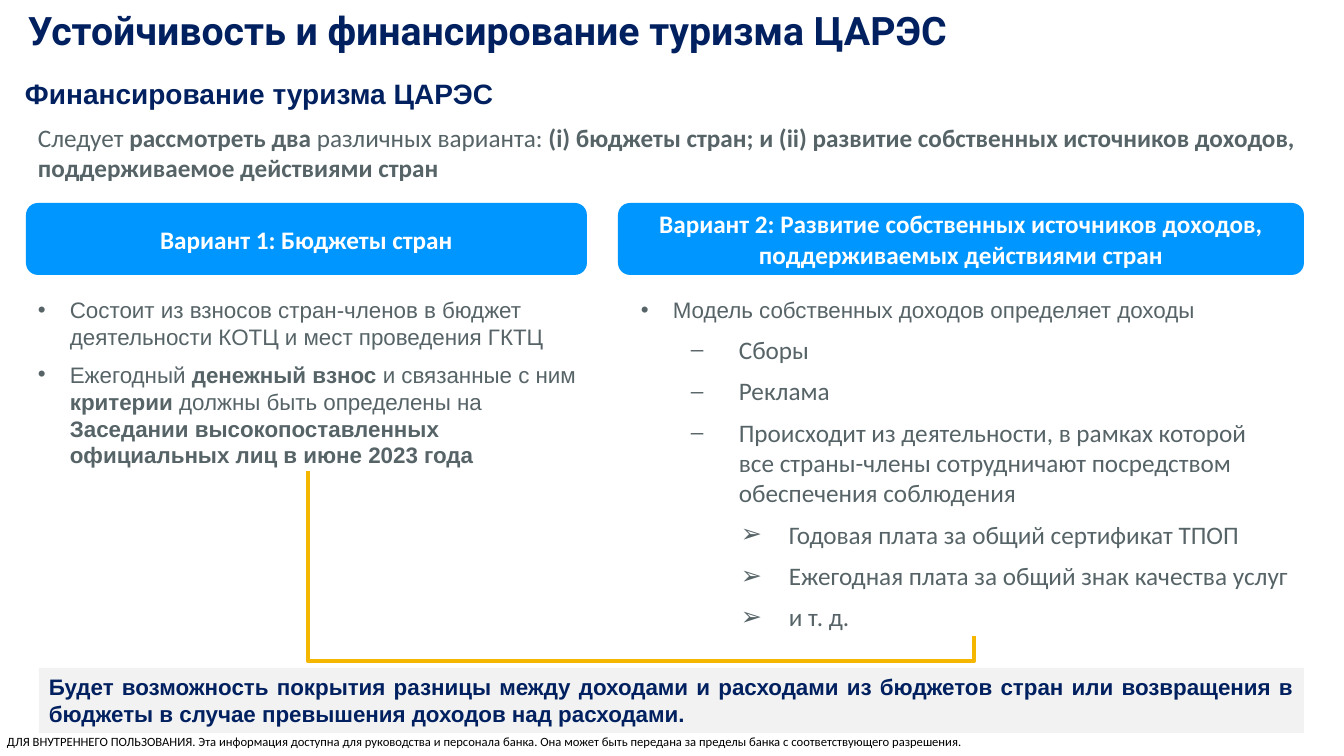
from lxml.etree import SubElement
from pptx import Presentation
from pptx.dml.color import RGBColor
from pptx.enum.shapes import MSO_CONNECTOR, MSO_SHAPE
from pptx.enum.text import MSO_ANCHOR, MSO_AUTO_SIZE, PP_ALIGN
from pptx.oxml.ns import qn
from pptx.util import Emu, Pt

PX = 914400 / 100.8

THEME = {
    "navy": "002060", "grey": "566367", "white": "FFFFFF", "black": "000000",
    "blue": "0096FF", "strip": "F2F2F2", "gold": "F5B600",
    "title": {"name": "Roboto", "size": Pt(28), "bold": True},
    "subtitle": {"name": "Arial", "size": Pt(20), "bold": True},
    "lead": {"name": "Calibri", "size": Pt(18)},
    "heading": {"name": "Calibri", "size": Pt(18), "bold": True},
    "body": {"name": "Arial", "size": Pt(16)},
    "strong": {"name": "Arial", "size": Pt(16), "bold": True},
    "footer": {"name": "Calibri", "size": Pt(9)},
}

# Level: bullet, left margin px, hanging px, font, alignment
LEVELS = [
    ("•", 32, 32, "body", PP_ALIGN.LEFT),
    ("⎯", 98, 48, "lead", PP_ALIGN.LEFT),
    ("➢", 148, 48, "lead", PP_ALIGN.LEFT),
]

# Words between ** marks are bold
FOOTER = ("ДЛЯ ВНУТРЕННЕГО ПОЛЬЗОВАНИЯ. Эта информация доступна для руководства и персонала "
          "банка. Она может быть передана за пределы банка с соответствующего разрешения.")
TITLE = "Устойчивость и финансирование туризма ЦАРЭС"
SUBTITLE = "Финансирование туризма ЦАРЭС"
LEAD = ("Следует **рассмотреть два **различных варианта: **(i) бюджеты стран; и (ii) развитие "
        "собственных источников доходов, поддерживаемое действиями стран**")
CONCLUSION = ("Будет возможность покрытия разницы между доходами и расходами из бюджетов стран "
              "или возвращения в бюджеты в случае превышения доходов над расходами.")
OPTIONS = [
    {"heading": "Вариант 1: Бюджеты стран",
     "heading_box": (26, 203, 561, 72), "list_box": (28, 291, 559, 184),
     "items": [
         (0, "Состоит из взносов стран-членов в бюджет деятельности КОТЦ и мест проведения ГКТЦ"),
         (0, "Ежегодный **денежный взнос **и связанные с ним **критерии **должны быть определены "
             "на **Заседании высокопоставленных официальных лиц в июне 2023 года**")]},
    {"heading": "Вариант 2: Развитие собственных источников доходов, "
                "поддерживаемых действиями стран",
     "heading_box": (618, 203, 686, 72), "list_box": (631, 291, 684, 350),
     "items": [
         (0, "Модель собственных доходов определяет доходы"),
         (1, "Сборы"),
         (1, "Реклама"),
         (1, "Происходит из деятельности, в рамках которой \nвсе страны-члены сотрудничают "
             "посредством обеспечения соблюдения"),
         (2, "Годовая плата за общий сертификат ТПОП"),
         (2, "Ежегодная плата за общий знак качества услуг"),
         (2, "и т. д.")]},
]
LINK_START, LINK_END, LINK_BOTTOM = (308, 471), (974, 636), 661


def px(n):
    return Emu(round(n * PX))


def color(name):
    return RGBColor.from_string(THEME[name])


def write(p, text, style, ink, align=PP_ALIGN.LEFT, after=0):
    """Fill a paragraph, turning ** marks into bold and newlines into breaks."""
    p.alignment, p.space_after = align, Pt(after)
    for i, part in enumerate(text.split("**")):
        for j, line in enumerate(part.split("\n")):
            if j:
                p.add_line_break()
            if line:
                r = p.add_run()
                r.text = line
                for key, value in THEME[style].items():
                    setattr(r.font, key, value)
                r.font.color.rgb = color(ink)
                if i % 2:
                    r.font.bold = True


def add_text(slide, box, text, style, ink, after=0, inset=None):
    tf = slide.shapes.add_textbox(*map(px, box)).text_frame
    tf.word_wrap = True
    tf.auto_size = MSO_AUTO_SIZE.SHAPE_TO_FIT_TEXT
    if inset is not None:
        for side in ("left", "top", "right", "bottom"):
            setattr(tf, f"margin_{side}", inset)
    if text:
        write(tf.paragraphs[0], text, style, ink, after=after)
    return tf


def add_panel(slide, kind, box, fill, text, style, ink, align, after=0):
    s = slide.shapes.add_shape(kind, *map(px, box))
    s.shadow.inherit = False
    s.fill.solid()
    s.fill.fore_color.rgb = color(fill)
    s.line.fill.background()
    tf = s.text_frame
    tf.word_wrap = True
    tf.vertical_anchor = MSO_ANCHOR.MIDDLE
    write(tf.paragraphs[0], text, style, ink, align, after)


def add_list(slide, box, items):
    tf = add_text(slide, box, "", "body", "grey")
    for i, (level, text) in enumerate(items):
        bullet, margin, hang, style, align = LEVELS[level]
        p = tf.add_paragraph() if i else tf.paragraphs[0]
        p.level = level
        pPr = p._p.get_or_add_pPr()
        pPr.set("marL", str(px(margin)))
        pPr.set("indent", str(-px(hang)))
        SubElement(pPr, qn("a:buFont"), typeface="Arial")
        SubElement(pPr, qn("a:buChar"), char=bullet)
        write(p, text, style, "grey", align, after=8)


def add_link(slide, start, end, bottom):
    """Draw a U-shaped elbow: a horizontal one turned by 270 degrees about its centre."""
    (x1, y1), (x2, y2) = start, end
    across, down = x2 - x1, y2 - y1
    cx, cy = (x1 + x2) / 2, (y1 + y2) / 2
    s = slide.shapes.add_connector(
        MSO_CONNECTOR.ELBOW, px(cx + down / 2), px(cy - across / 2),
        px(cx - down / 2), px(cy + across / 2))
    s.line.color.rgb = color("gold")
    s.line.width = Pt(3)
    spPr = s._element.spPr
    spPr.find(qn("a:xfrm")).set("rot", str(270 * 60000))
    bend = round((bottom - y1) / down * 100000)
    SubElement(spPr.find(qn("a:prstGeom")).find(qn("a:avLst")), qn("a:gd"),
               name="adj1", fmla=f"val {bend}")
    SubElement(spPr, qn("a:effectLst"))


def main():
    prs = Presentation()
    prs.slide_width, prs.slide_height = px(1344), px(756)
    slide = prs.slides.add_slide(prs.slide_layouts[6])

    add_text(slide, (7, 734, 1129, 15), FOOTER, "footer", "black", inset=0)
    add_text(slide, (28, 117, 1297, 72), LEAD, "lead", "grey")
    add_text(slide, (15, 72, 525, 44), SUBTITLE, "subtitle", "navy", after=6)
    for option in OPTIONS:
        add_panel(slide, MSO_SHAPE.ROUNDED_RECTANGLE, option["heading_box"], "blue",
                  option["heading"], "heading", "white", PP_ALIGN.CENTER)
        add_list(slide, option["list_box"], option["items"])
    add_panel(slide, MSO_SHAPE.RECTANGLE, (39, 668, 1265, 65), "strip",
              CONCLUSION, "strong", "navy", PP_ALIGN.JUSTIFY, after=8)
    add_link(slide, LINK_START, LINK_END, LINK_BOTTOM)
    add_text(slide, (18, 1, 1227, 57), TITLE, "title", "navy")
    prs.save("out.pptx")


if __name__ == "__main__":
    main()
